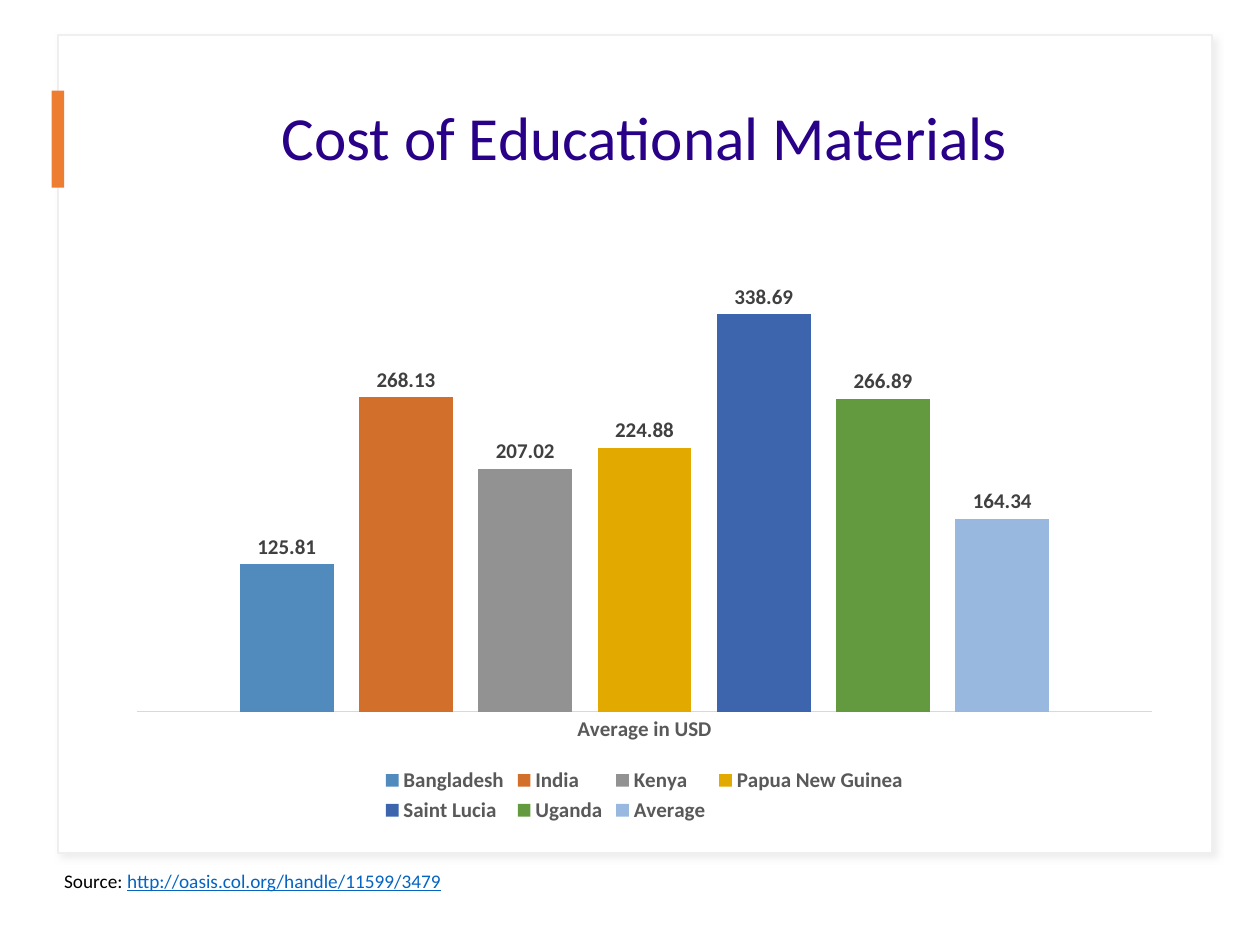
from lxml import etree
from pptx import Presentation
from pptx.chart.data import CategoryChartData
from pptx.dml.color import RGBColor
from pptx.enum import chart as ch, shapes, text
from pptx.oxml import parse_xml
from pptx.oxml.ns import nsdecls, qn
from pptx.util import Inches, Pt

# Content
TITLE = "Cost of Educational Materials"
GROUP = "Average in USD"
COSTS = [
    ("Bangladesh", 125.81, "518ABD"),
    ("India", 268.13, "D26F2B"),
    ("Kenya", 207.02, "929292"),
    ("Papua New Guinea", 224.88, "E2AA00"),
    ("Saint Lucia", 338.69, "3C65AE"),
    ("Uganda", 266.89, "639A3F"),
    ("Average", 164.34, "98B8E0"),
]
SOURCE = [("Source: ", "black"), ("http://oasis.col.org/handle/11599/3479", "link")]
COLORS = {
    "white": "FFFFFF", "edge": "EFEFEF", "shade": "C5C3C3", "accent": "ED7D31",
    "title": "290088", "black": "000000", "link": "0563C1",
    "label": "404040", "axis": "595959", "rule": "D9D9D9",
}
FONT = "Calibri"
LEFT, WIDTH = 0.92, 8.39  # shared by title and chart


def rgb(name):
    return RGBColor.from_string(COLORS[name])


def style(font, size, color, bold=False):
    font.name, font.size, font.bold = FONT, Pt(size), bold
    font.color.rgb = rgb(color)


def box(*at):
    return [Inches(n) for n in at]


def panel(at, fill, line=None):
    shape = slide.shapes.add_shape(shapes.MSO_SHAPE.RECTANGLE, *box(*at))
    shape.shadow.inherit = False
    shape.fill.solid()
    shape.fill.fore_color.rgb = rgb(fill)
    if line:
        shape.line.color.rgb = rgb(line)
        shape.line.width = Pt(1)
    else:
        shape.line.fill.background()
    return shape


deck = Presentation()
deck.slide_width, deck.slide_height = Inches(10), Inches(7.5)
slide = deck.slides.add_slide(deck.slide_layouts[6])

# Card with a soft shadow
card = panel((0.46, 0.28, 9.16, 6.49), "white", "edge")
glow = card._element.spPr.find(qn("a:effectLst"))
glow.append(parse_xml(
    f'<a:outerShdw {nsdecls("a")} blurRad="{Pt(4)}" dist="{Pt(3)}" dir="2700000" '
    f'algn="tl" rotWithShape="0"><a:srgbClr val="{COLORS["shade"]}">'
    '<a:alpha val="30000"/></a:srgbClr></a:outerShdw>'))

# Title
head = slide.shapes.add_textbox(*box(LEFT, 0.56, WIDTH, 1.11)).text_frame
head.word_wrap = True
head.vertical_anchor = text.MSO_ANCHOR.MIDDLE
para = head.paragraphs[0]
para.text = TITLE
para.alignment = text.PP_ALIGN.CENTER
para.line_spacing = 0.9
style(para.font, 35, "title")

# Accent bar
panel((0.41, 0.72, 0.1, 0.77), "accent")

# Chart
data = CategoryChartData()
data.categories = [GROUP]
for name, cost, _ in COSTS:
    data.add_series(name, [cost])
chart = slide.shapes.add_chart(
    ch.XL_CHART_TYPE.COLUMN_CLUSTERED, *box(LEFT, 1.83, WIDTH, 4.74), data).chart
style(chart.font, 10, "black")
chart.has_title = False
chart.has_legend = True
chart.legend.position = ch.XL_LEGEND_POSITION.BOTTOM
chart.legend.include_in_layout = False
style(chart.legend.font, 12, "axis", True)

cats, vals = chart.category_axis, chart.value_axis
cats.major_tick_mark = ch.XL_TICK_MARK.NONE
style(cats.tick_labels.font, 12, "axis", True)
cats.format.line.color.rgb = rgb("rule")
cats.format.line.width = Pt(0.75)
vals.visible = False
vals.has_major_gridlines = False
vals.minimum_scale, vals.maximum_scale = 0, 400

plot = chart.plots[0]
plot.gap_width, plot.overlap = 219, -27
plot.vary_by_categories = False
for series, (_, _, color) in zip(plot.series, COSTS):
    series.format.fill.solid()
    series.format.fill.fore_color.rgb = RGBColor.from_string(color)
    tags = series.data_labels
    tags.show_value = True
    tags.position = ch.XL_LABEL_POSITION.OUTSIDE_END
    style(tags.font, 12, "label", True)

# Source line
foot = slide.shapes.add_textbox(*box(0.41, 6.85, 3.22, 0.29)).text_frame
foot.word_wrap = False
foot.auto_size = text.MSO_AUTO_SIZE.SHAPE_TO_FIT_TEXT
para = foot.paragraphs[0]
para.font.name, para.font.size = FONT, Pt(11)
for words, color in SOURCE:
    run = para.add_run()
    run.text = words
    run.font.color.rgb = rgb(color)
    run.font.underline = color == "link"

deck.save("out.pptx")
